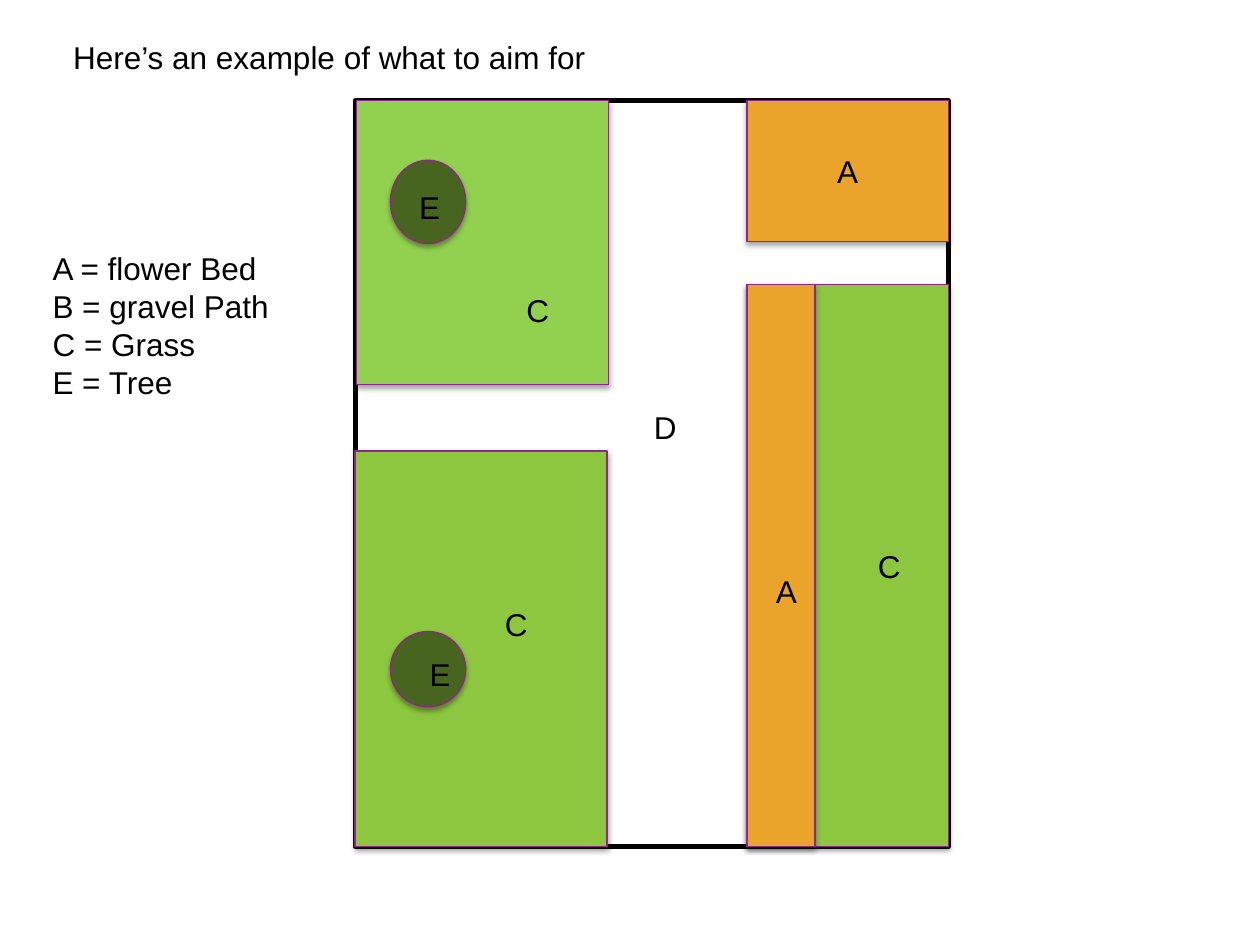
from lxml.etree import SubElement
from pptx import Presentation
from pptx.dml.color import RGBColor
from pptx.enum.shapes import MSO_SHAPE as Shape
from pptx.enum.text import MSO_ANCHOR as Anchor, MSO_AUTO_SIZE as AutoSize, PP_ALIGN as Align
from pptx.oxml.ns import qn
from pptx.util import Cm, Pt

THEME = {
    "font": "Arial", "size": Pt(18), "ink": RGBColor(0, 0, 0),
    "edge": RGBColor.from_string("91248E"), "edge_width": Pt(0.75), "wall_width": Pt(3),
    "grass": RGBColor.from_string("8DC63F"), "lawn": RGBColor.from_string("92D050"),
    "bed": RGBColor.from_string("EAA42C"), "tree": RGBColor.from_string("47651E"),
}
SHADOW = {"blurRad": Pt(3.1), "dist": Pt(1.8), "dir": 90 * 60000, "rotWithShape": 0}
SHADOW_ALPHA = 35000

TITLE = "Here’s an example of what to aim for"
TITLE_AREA = (1.22, 0.64, 21.26, 1.02)
KEY = ["A = flower Bed", "B = gravel Path", "C = Grass", "E = Tree"]
KEY_AREA = (0.81, 4.9, 5.23, 3.33)

LEFT, TOP, RIGHT, BOTTOM = 7.16, 2.03, 19.12, 17.07
LAWN_WIDTH, BED_LEFT, BORDER_TOP, GRASS_TOP = 5.08, 15.06, 5.74, 9.09
STRIP_WIDTH, TREE_LEFT, TREE_WIDTH = 1.37, 7.87, 1.52
BED_WIDTH = RIGHT - BED_LEFT
PLOTS = [
    ("grass", Shape.RECTANGLE, (LEFT, GRASS_TOP, LAWN_WIDTH, BOTTOM - GRASS_TOP), ""),
    ("lawn", Shape.RECTANGLE, (LEFT + 0.03, TOP, LAWN_WIDTH, 5.72), ""),
    ("bed", Shape.RECTANGLE, (BED_LEFT, TOP, BED_WIDTH, 2.84), "A"),
    ("grass", Shape.RECTANGLE, (BED_LEFT, BORDER_TOP, BED_WIDTH, BOTTOM - BORDER_TOP), ""),
    ("bed", Shape.RECTANGLE, (BED_LEFT, BORDER_TOP, STRIP_WIDTH, BOTTOM - BORDER_TOP), ""),
    ("tree", Shape.OVAL, (TREE_LEFT, 3.23, TREE_WIDTH, 1.68), ""),
    ("tree", Shape.OVAL, (TREE_LEFT, 12.73, TREE_WIDTH, TREE_WIDTH), ""),
]
LETTER_HEIGHT = 1.02
LETTERS = [
    ("A", 15.39, 11.4, 0.76), ("C", 10.36, 5.74, 0.76), ("C", 9.93, 12.07, 0.76),
    ("C", 17.45, 10.9, 0.76), ("D", 12.93, 8.1, 1.5), ("E", 8.2, 3.66, 0.74),
    ("E", 8.41, 13.08, 0.53),
]


def lengths(area):
    return [Cm(round(value, 2)) for value in area]


def write(holder, lines, align=Align.LEFT, **frame_format):
    frame = holder.text_frame
    for name, value in frame_format.items():
        setattr(frame, name, value)
    frame.text = "\n".join(lines)
    for paragraph in frame.paragraphs:
        paragraph.alignment = align
        font = paragraph.runs[0].font
        for name in ("name", "size"):
            setattr(font, name, THEME["font" if name == "name" else name])
        font.color.rgb = THEME["ink"]


def write_label(parent, lines, area):
    write(parent.add_textbox(*lengths(area)), lines,
          word_wrap=True, auto_size=AutoSize.SHAPE_TO_FIT_TEXT)


def outline(plot, color, width):
    plot.shadow.inherit = False
    plot.line.color.rgb = color
    plot.line.width = width


def cast_shadow(plot):
    effects = plot.element.spPr.find(qn("a:effectLst"))
    outer = SubElement(effects, qn("a:outerShdw"), {k: str(int(v)) for k, v in SHADOW.items()})
    color = SubElement(outer, qn("a:srgbClr"), val=str(THEME["ink"]))
    SubElement(color, qn("a:alpha"), val=str(SHADOW_ALPHA))


def draw_garden(garden):
    wall = garden.add_shape(Shape.RECTANGLE, *lengths((LEFT, TOP, RIGHT - LEFT, BOTTOM - TOP)))
    wall.fill.background()
    outline(wall, THEME["ink"], THEME["wall_width"])
    for ground, outline_shape, area, letter in PLOTS:
        plot = garden.add_shape(outline_shape, *lengths(area))
        plot.fill.solid()
        plot.fill.fore_color.rgb = THEME[ground]
        outline(plot, THEME["edge"], THEME["edge_width"])
        cast_shadow(plot)
        if letter:
            write(plot, [letter], Align.CENTER, vertical_anchor=Anchor.MIDDLE)
    for letter, left, top, width in LETTERS:
        write_label(garden, [letter], (left, top, width, LETTER_HEIGHT))


def main():
    deck = Presentation()
    deck.slide_width, deck.slide_height = Cm(25.4), Cm(19.05)
    slide = deck.slides.add_slide(deck.slide_layouts[5])
    title = slide.shapes.title
    for name, value in zip(("left", "top", "width", "height"), lengths(TITLE_AREA)):
        setattr(title, name, value)
    write(title, [TITLE], word_wrap=True, vertical_anchor=Anchor.TOP,
          auto_size=AutoSize.SHAPE_TO_FIT_TEXT)
    draw_garden(slide.shapes.add_group_shape().shapes)
    write_label(slide.shapes, KEY, KEY_AREA)
    deck.save("out.pptx")


if __name__ == "__main__":
    main()
